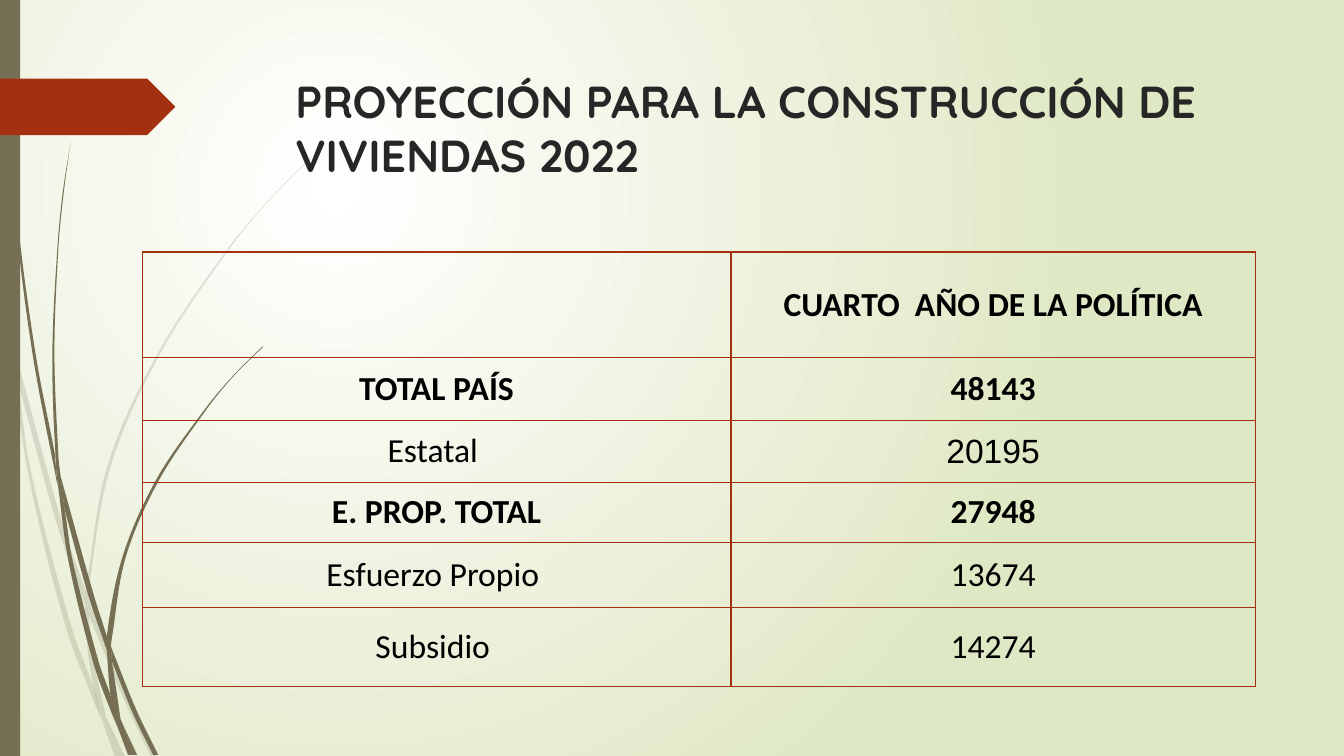
from dataclasses import dataclass

from pptx import Presentation, oxml, util as u
from pptx.dml.color import RGBColor
from pptx.enum import shapes, text
from pptx.oxml import ns

COLS, ROWS = 1333, 750
UNIT = u.Inches(0.01)


@dataclass(frozen=True)
class Theme:
    white: str = "FFFFFF"
    green: str = "DFE8C4"
    olive: str = "766F54"
    red: str = "A53010"
    dark: str = "262626"
    black: str = "000000"
    head: int = 32
    body: int = 24
    line: float = 1
    faint: int = 20
    full: int = 100


@dataclass(frozen=True)
class Box:
    col: int
    row: int
    wide: int
    high: int

    def emu(self) -> tuple:
        return tuple(n * UNIT for n in (self.col, self.row, self.wide, self.high))


@dataclass(frozen=True)
class Blade:
    down: tuple
    up: tuple


@dataclass(frozen=True)
class Entry:
    label: str
    value: str
    high: int
    bold: bool = False
    face: str = "Calibri"


THEME = Theme()
BAR = Box(0, 0, 20, ROWS)
TAG = Box(0, 78, 174, 56)
TITLE = Box(283, 68, 975, 140)
TABLE = Box(141, 250, 1104, 431)
WIDTHS = (584, 520)
BACK = (
    Blade(((0, 299), (10, 344), (11, 350)), ((11, 350), (8, 322), (0, 282))),
    Blade(((17, 376), (57, 522), (84, 599)), ((85, 586), (62, 520), (14, 345))),
    Blade(((88, 610), (123, 694), (150, 751)), ((155, 751), (127, 692), (92, 607), (88, 596))),
    Blade(((105, 711), (119, 751)), ((124, 751), (105, 711))),
    Blade(((11, 350), (28, 470), (65, 621), (92, 693), (101, 714)),
          ((99, 707), (93, 683), (70, 619), (31, 469), (17, 376), (11, 350))),
    Blade(((84, 599), (87, 646), (93, 683), (96, 692), (105, 711)),
          ((104, 706), (91, 646), (88, 610), (84, 599))),
    Blade(((312, 153), (289, 175), (268, 197), (228, 244), (158, 348), (107, 461), (85, 586)),
          ((88, 596), (88, 584), (110, 462), (160, 349), (229, 245), (268, 198), (312, 153))),
    Blade(((101, 714), (114, 751)), ((119, 751), (101, 714))),
    Blade(((84, 599), (88, 610)), ((88, 596), (85, 586))),
    Blade(((93, 683), (99, 707), (119, 751)), ((119, 751), (105, 711), (96, 692), (93, 683))),
)
FRONT = (
    Blade(((3, 0), (3, 48), (7, 110), (17, 233), (33, 355), (57, 481)),
          ((55, 457), (55, 453), (36, 355), (19, 232), (8, 109), (5, 48), (3, 0))),
    Blade(((64, 505), (88, 592), (106, 645)), ((106, 631), (93, 590), (60, 472))),
    Blade(((111, 656), (132, 708), (152, 749)), ((157, 749), (136, 706), (113, 649), (110, 641))),
    Blade(((57, 477), (68, 557), (93, 659), (111, 708), (117, 722)),
          ((116, 717), (110, 691), (98, 657), (72, 556), (64, 505), (57, 477))),
    Blade(((70, 141), (62, 193), (57, 245), (52, 349), (55, 449), (60, 472)),
          ((60, 472), (58, 453), (54, 349), (58, 245), (63, 193), (70, 141))),
    Blade(((122, 719), (133, 749)), ((136, 749), (122, 719))),
    Blade(((55, 449), (57, 478), (64, 505)), ((64, 505), (60, 472), (55, 449))),
    Blade(((260, 344), (231, 373), (204, 405), (156, 474), (122, 551), (106, 631), (110, 641)),
          ((110, 641), (111, 633), (125, 552), (158, 476), (205, 406), (231, 374), (261, 344))),
    Blade(((117, 722), (127, 749)), ((131, 749), (117, 722))),
    Blade(((106, 645), (110, 692), (116, 706), (122, 719)),
          ((120, 716), (111, 656), (109, 651), (106, 645))),
    Blade(((106, 631), (106, 645), (111, 656)), ((110, 641), (106, 631))),
    Blade(((110, 691), (117, 722), (131, 749)), ((133, 749), (122, 719), (116, 706), (110, 691))),
)
ENTRIES = (
    Entry("", "CUARTO  AÑO DE LA POLÍTICA", 105, True),
    Entry("TOTAL PAÍS", "48143", 62, True),
    Entry("Estatal ", "20195", 62, face="Arial"),
    Entry("E. PROP. TOTAL", "27948", 59, True),
    Entry("Esfuerzo Propio ", "13674", 65),
    Entry("Subsidio ", "14274", 78),
)


def apply(item, form: dict) -> None:
    for key, val in form.items():
        setattr(item, key, val)


def paint(shape, color: str, alpha: int = THEME.full) -> None:
    shape.shadow.inherit = False
    shape.fill.solid()
    shape.fill.fore_color.rgb = RGBColor.from_string(color)
    shape.line.fill.background()
    if alpha < THEME.full:
        tone = shape.element.spPr.find(ns.qn("a:solidFill"))[0]
        tone.append(oxml.parse_xml(f'<a:alpha {ns.nsdecls("a")} val="{alpha * 1000}"/>'))


def write(para, words: str, face: str, size: int, color: str, bold: bool) -> None:
    run = para.add_run()
    run.text = words
    apply(run.font, {"name": face, "size": u.Pt(size), "bold": bold})
    run.font.color.rgb = RGBColor.from_string(color)


def backdrop(slide) -> None:
    fill = slide.background.fill
    fill.gradient()
    for stop, color, place in zip(fill.gradient_stops, (THEME.white, THEME.green), (0, 1)):
        stop.color.rgb = RGBColor.from_string(color)
        stop.position = place
    grad = slide.element.find(".//" + ns.qn("a:gradFill"))
    grad.replace(grad.find(ns.qn("a:lin")), oxml.parse_xml(
        f'<a:path {ns.nsdecls("a")} path="circle">'
        '<a:fillToRect l="50000" t="50000" r="100000" b="100000"/></a:path>'))


def bend(pts: tuple) -> list:
    ends = (pts[0], *pts, pts[-1])
    curve = []
    for a, b, c, d in zip(ends, ends[1:], ends[2:], ends[3:]):
        third = (c[1] - b[1]) / 3
        start = (c[0] - a[0]) / (c[1] - a[1]) * third
        stop = (d[0] - b[0]) / (d[1] - b[1]) * third
        curve += [(b[0] + start, b[1] + third), (c[0] - stop, c[1] - third), c]
    return curve


def grow(slide, blade: Blade, alpha: int) -> None:
    down, up = bend(blade.down), bend(blade.up)
    pts = [(x * UNIT, y * UNIT) for x, y in (blade.down[0], *down, blade.up[0], *up)]
    form = slide.shapes.build_freeform(*pts[0])
    form.add_line_segments(pts[1:], close=True)
    shape = form.convert_to_shape()
    lines = list(shape.element.iter(ns.qn("a:lnTo")))
    for run in (lines[:len(down)], lines[len(down) + 1:]):
        for i in range(0, len(run) - 2, 3):
            cubic = oxml.parse_xml(f'<a:cubicBezTo {ns.nsdecls("a")}/>')
            run[i].addprevious(cubic)
            for line in run[i:i + 3]:
                cubic.append(line[0])
                line.getparent().remove(line)
    paint(shape, THEME.olive, alpha)


def block(slide, kind, box: Box, color: str) -> None:
    paint(slide.shapes.add_shape(kind, *box.emu()), color)


def heading(slide) -> None:
    frame = slide.shapes.add_textbox(*TITLE.emu()).text_frame
    apply(frame, {"word_wrap": True, "vertical_anchor": text.MSO_ANCHOR.TOP})
    write(frame.paragraphs[0], "PROYECCIÓN PARA LA CONSTRUCCIÓN DE VIVIENDAS 2022",
          "Quicksand", THEME.head, THEME.dark, True)


def edge(cell) -> None:
    props = cell._tc.get_or_add_tcPr()
    for i, side in enumerate(("lnL", "lnR", "lnT", "lnB")):
        props.insert(i, oxml.parse_xml(
            f'<a:{side} {ns.nsdecls("a")} w="{u.Pt(THEME.line)}"><a:solidFill>'
            f'<a:srgbClr val="{THEME.red}"/></a:solidFill></a:{side}>'))


def grid(slide) -> None:
    table = slide.shapes.add_table(len(ENTRIES), len(WIDTHS), *TABLE.emu()).table
    apply(table, {"first_row": False, "horz_banding": False})
    for col, wide in zip(table.columns, WIDTHS):
        col.width = wide * UNIT
    for row, entry in zip(table.rows, ENTRIES):
        row.height = entry.high * UNIT
        faces = ("Calibri", entry.face)
        for cell, words, face in zip(row.cells, (entry.label, entry.value), faces):
            apply(cell, dict.fromkeys(("margin_left", "margin_right", "margin_top", "margin_bottom"), 0))
            cell.vertical_anchor = text.MSO_ANCHOR.MIDDLE
            cell.fill.background()
            edge(cell)
            para = cell.text_frame.paragraphs[0]
            para.alignment = text.PP_ALIGN.CENTER
            if words:
                write(para, words, face, THEME.body, THEME.black, entry.bold)


def main() -> None:
    deck = Presentation()
    apply(deck, {"slide_width": COLS * UNIT, "slide_height": ROWS * UNIT})
    slide = deck.slides.add_slide(deck.slide_layouts[6])
    backdrop(slide)
    for blades, alpha in ((BACK, THEME.faint), (FRONT, THEME.full)):
        for blade in blades:
            grow(slide, blade, alpha)
    block(slide, shapes.MSO_SHAPE.RECTANGLE, BAR, THEME.olive)
    block(slide, shapes.MSO_SHAPE.PENTAGON, TAG, THEME.red)
    heading(slide)
    grid(slide)
    deck.save("out.pptx")


if __name__ == "__main__":
    main()
